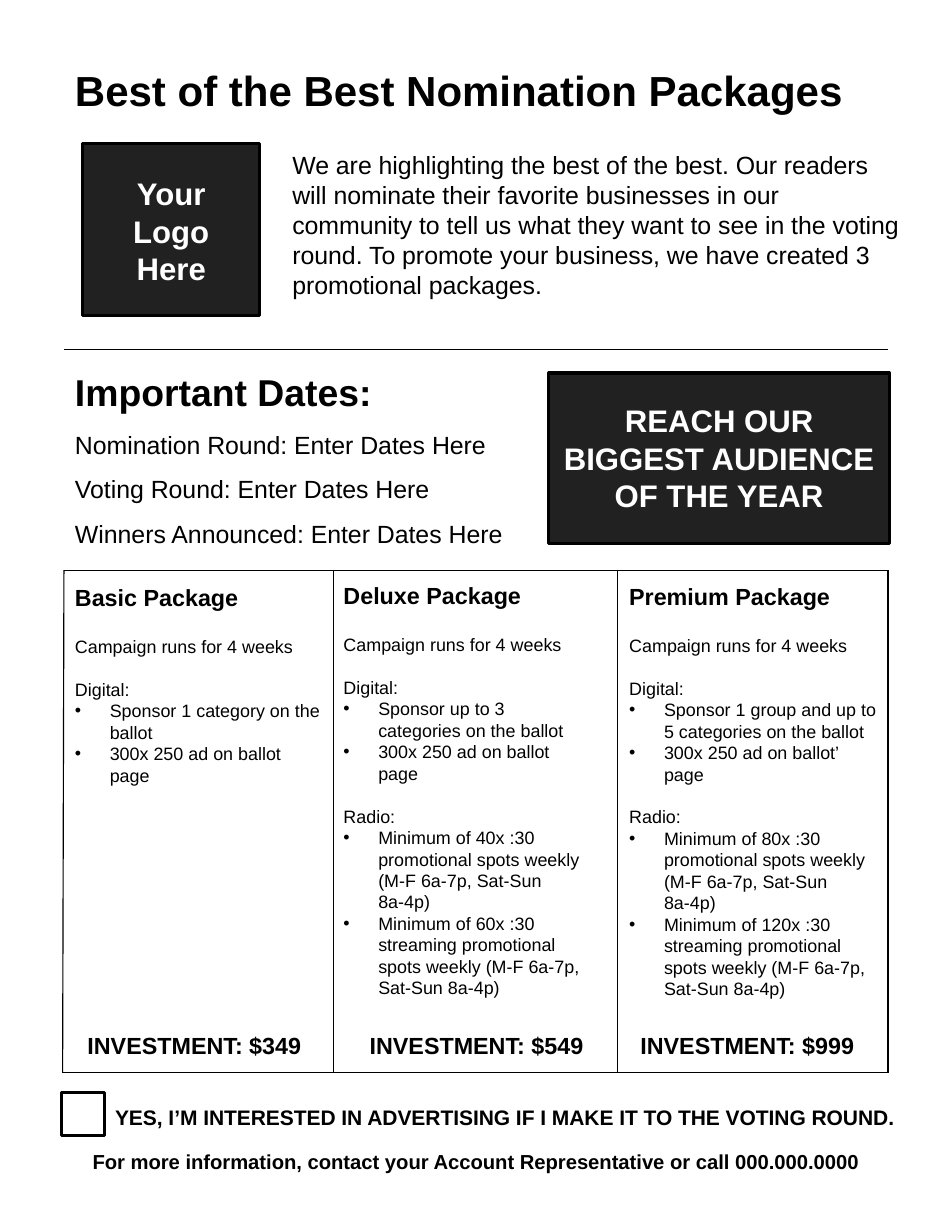
"""Build the one-page sales sheet for the nomination packages."""
from dataclasses import dataclass
from itertools import pairwise

from lxml import etree
from pptx import Presentation
from pptx import util as u
from pptx.dml.color import RGBColor
from pptx.enum import shapes, text
from pptx.oxml import ns

BLACK, WHITE, CHARCOAL = "000000", "FFFFFF", "212121"
FONT = "Arial"
COLUMN_WIDTH = 6.12
COLUMN_EDGES = (1.45, 7.57, 14, 20.14)
GRID_TOP, GRID_BOTTOM = 12.93, 24.33
FRAME_FORMAT = {
    "word_wrap": True,
    "auto_size": text.MSO_AUTO_SIZE.NONE,
    "vertical_anchor": text.MSO_ANCHOR.TOP,
} | {f"margin_{side}": u.Cm(0.25) for side in ("left", "top", "right", "bottom")}


@dataclass
class Box:
    left: float
    top: float
    width: float
    height: float

    def lengths(self) -> tuple:
        return tuple(u.Cm(value) for value in (self.left, self.top, self.width, self.height))


@dataclass
class Line:
    words: str
    size: float
    bold: bool = False
    color: str = BLACK
    centered: bool = False
    before: float = 0
    spacing: float = 1.0
    bullet: bool = False


@dataclass
class Package:
    name: str
    box: Box
    price: str
    price_left: float
    digital: tuple
    radio: tuple = ()

    def lines(self) -> list[Line]:
        lines = [Line(f"{self.name} Package", 15, bold=True),
                 Line("Campaign runs for 4 weeks", 11.5, before=15.6)]
        for medium, offers in (("Digital:", self.digital), ("Radio:", self.radio)):
            if offers:
                lines.append(Line(medium, 11.5, before=13.8))
                lines += [Line(offer, 11.5, bullet=True) for offer in offers]
        return lines


def apply(target, values: dict) -> None:
    for name, value in values.items():
        setattr(target, name, value)


def rgb(color: str) -> RGBColor:
    return RGBColor.from_string(color)


def set_bullet(paragraph, bullet: bool) -> None:
    properties = paragraph._p.get_or_add_pPr()
    indent = u.Cm(0.79) if bullet else 0
    properties.set("marL", str(indent))
    properties.set("indent", str(-indent))
    if bullet:
        etree.SubElement(properties, ns.qn("a:buFont"), typeface=FONT)
        etree.SubElement(properties, ns.qn("a:buChar"), char="•")
    else:
        etree.SubElement(properties, ns.qn("a:buNone"))


def write(shape, box: Box, lines: list[Line]) -> None:
    apply(shape, dict(zip(("left", "top", "width", "height"), box.lengths())))
    frame = shape.text_frame
    apply(frame, FRAME_FORMAT)
    for index, line in enumerate(lines):
        paragraph = frame.add_paragraph() if index else frame.paragraphs[0]
        apply(paragraph, {
            "alignment": text.PP_ALIGN.CENTER if line.centered else text.PP_ALIGN.LEFT,
            "line_spacing": line.spacing,
            "space_before": u.Pt(line.before),
            "space_after": u.Pt(0),
        })
        set_bullet(paragraph, line.bullet)
        run = paragraph.add_run()
        run.text = line.words
        apply(run.font, {"name": FONT, "size": u.Pt(line.size), "bold": line.bold})
        run.font.color.rgb = rgb(line.color)


def add_text(slide, box: Box, *lines: Line) -> None:
    write(slide.shapes.add_textbox(*box.lengths()), box, lines)


def add_panel(slide, box: Box, fill: str) -> None:
    shape = slide.shapes.add_shape(shapes.MSO_SHAPE.RECTANGLE, *box.lengths())
    shape.shadow.inherit = False
    shape.fill.solid()
    shape.fill.fore_color.rgb = rgb(fill)
    shape.line.color.rgb = rgb(BLACK)
    shape.line.width = u.Pt(2)


def add_rule(slide, start: tuple, end: tuple) -> None:
    connector = slide.shapes.add_connector(
        shapes.MSO_CONNECTOR.STRAIGHT, *(u.Cm(value) for value in start + end))
    connector.line.color.rgb = rgb(BLACK)
    connector.line.width = u.Pt(0.75)
    etree.SubElement(connector._element.spPr, ns.qn("a:effectLst"))


PACKAGES = (
    Package("Basic", Box(1.45, 12.98, COLUMN_WIDTH, 8.41), "$349", 1.35,
            ("Sponsor 1 category on the ballot", "300x 250 ad on ballot page")),
    Package("Deluxe", Box(7.54, 12.93, COLUMN_WIDTH, 13.16), "$549", 7.75,
            ("Sponsor up to 3 categories on the ballot", "300x 250 ad on ballot page"),
            ("Minimum of 40x :30 promotional spots weekly (M-F 6a-7p, Sat-Sun 8a-4p)",
             "Minimum of 60x :30 streaming promotional spots weekly "
             "(M-F 6a-7p, Sat-Sun 8a-4p)")),
    Package("Premium", Box(14.02, 12.95, COLUMN_WIDTH, 11.33), "$999", 13.89,
            ("Sponsor 1 group and up to 5 categories on the ballot",
             "300x 250 ad on ballot’ page"),
            ("Minimum of 80x :30 promotional spots weekly (M-F 6a-7p, Sat-Sun 8a-4p)",
             "Minimum of 120x :30 streaming promotional spots weekly "
             "(M-F 6a-7p, Sat-Sun 8a-4p)")),
)


def main() -> None:
    presentation = Presentation()
    apply(presentation, {"slide_width": u.Cm(21.59), "slide_height": u.Cm(27.94)})
    slide = presentation.slides.add_slide(presentation.slide_layouts[1])
    left, right = COLUMN_EDGES[0], COLUMN_EDGES[-1]

    write(slide.shapes.title, Box(left, 1.22, 18.72, 1.7),
          [Line("Best of the Best Nomination Packages", 27, bold=True)])
    rounds = ("Nomination Round", "Voting Round", "Winners Announced")
    write(slide.placeholders[1], Box(left, 8.13, 13.59, 3.86),
          [Line("Important Dates:", 24, bold=True)]
          + [Line(f"{name}: Enter Dates Here", 16, spacing=1.5) for name in rounds])

    add_text(slide, Box(6.38, 3.15, 14.35, 4.11), Line(
        "We are highlighting the best of the best. Our readers will nominate their "
        "favorite businesses in our community to tell us what they want to see in the "
        "voting round. To promote your business, we have created 3 promotional packages.",
        16))
    panel_format = {"size": 20, "bold": True, "color": WHITE, "centered": True}
    add_panel(slide, Box(1.88, 3.25, 4.01, 3.91), CHARCOAL)
    add_text(slide, Box(1.7, 3.71, 4.37, 3.58),
             *(Line(word, **panel_format) for word in ("Your", "Logo", "Here")))
    add_panel(slide, Box(12.45, 8.46, 7.72, 3.86), CHARCOAL)
    add_text(slide, Box(12.45, 8.86, 7.72, 3.05),
             Line("REACH OUR BIGGEST AUDIENCE OF THE YEAR", **panel_format))

    add_rule(slide, (left, 7.92), (right, 7.92))
    corners = ((1.42, GRID_BOTTOM), (left, GRID_TOP), (right, GRID_TOP), (right, GRID_BOTTOM),
               (1.42, GRID_BOTTOM))
    for start, end in pairwise(corners):
        add_rule(slide, start, end)
    for edge in COLUMN_EDGES[1:-1]:
        add_rule(slide, (edge, GRID_TOP), (edge, GRID_BOTTOM))

    for package in PACKAGES:
        add_text(slide, package.box, *package.lines())
        add_text(slide, Box(package.price_left, 23.14, COLUMN_WIDTH, 1.02),
                 Line(f"INVESTMENT: {package.price}", 15, bold=True, centered=True))

    add_panel(slide, Box(1.4, 24.77, 0.97, 0.99), WHITE)
    add_text(slide, Box(2.36, 24.79, 18.72, 1.02), Line(
        "YES, I’M INTERESTED IN ADVERTISING IF I MAKE IT TO THE VOTING ROUND.",
        13.5, bold=True))
    add_text(slide, Box(1.42, 25.81, 18.72, 1.02), Line(
        "For more information, contact your Account Representative or call 000.000.0000",
        13, bold=True, centered=True))
    presentation.save("out.pptx")


if __name__ == "__main__":
    main()
